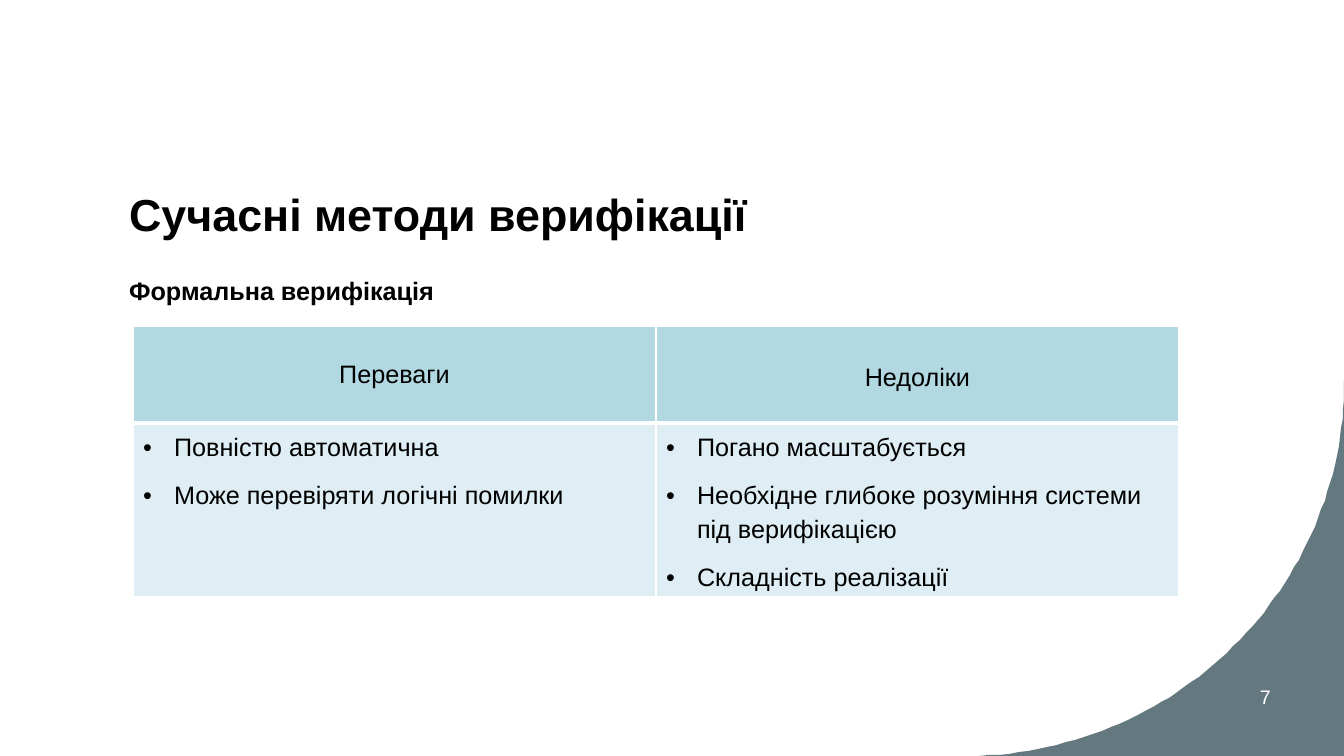
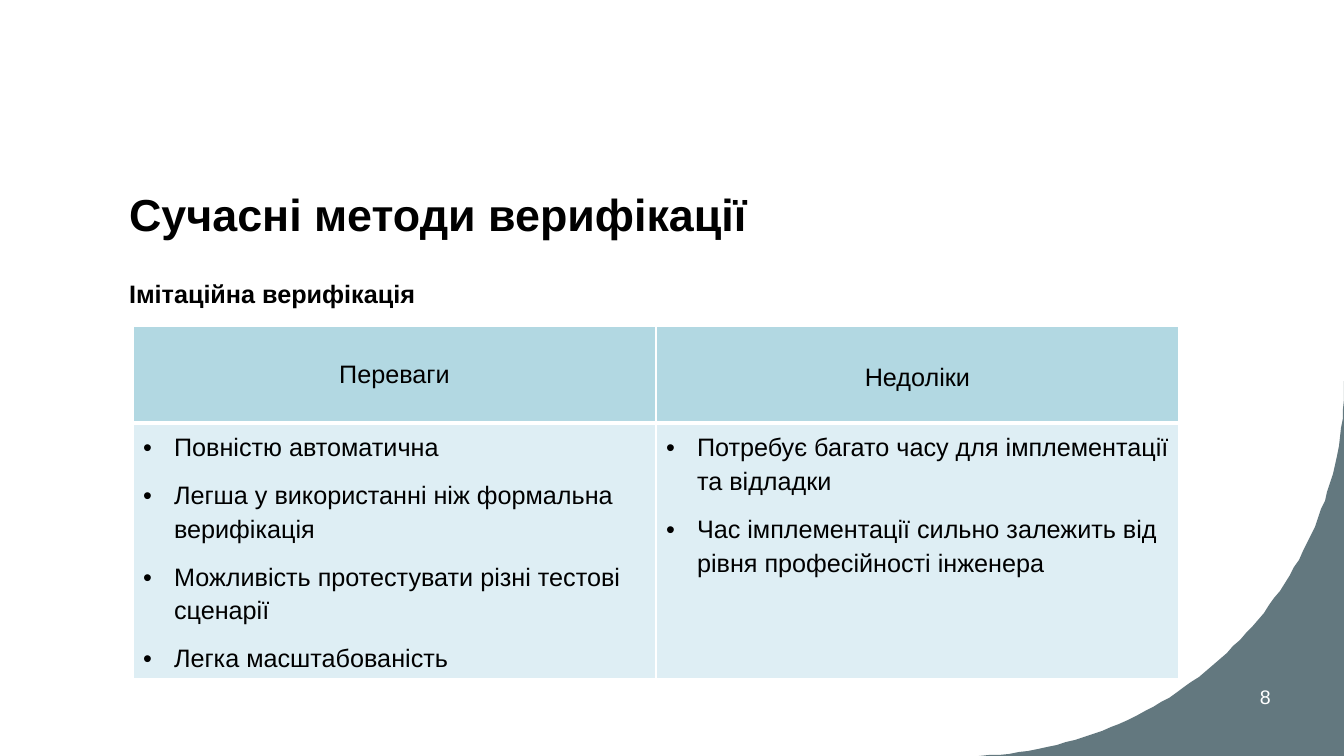
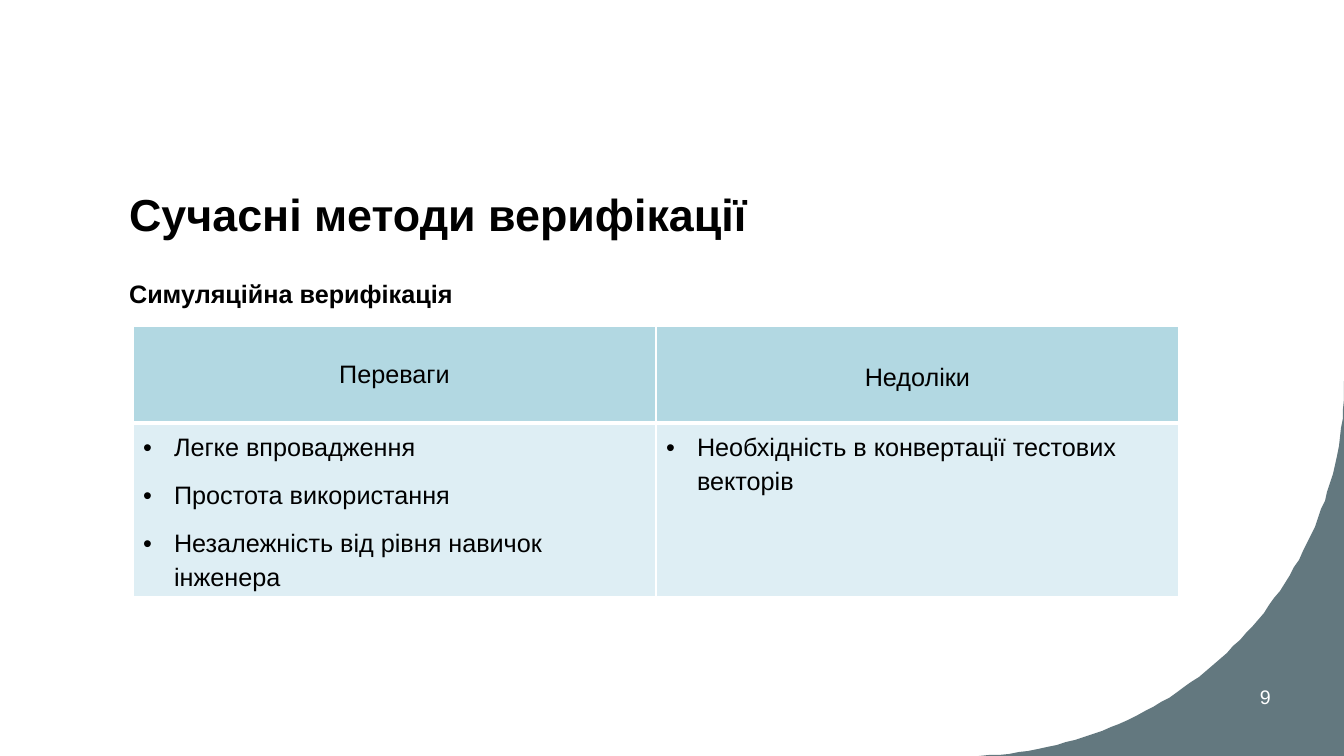
import pptx
import pptx.util
import pptx.dml.color
import pptx.enum.text
import pptx.oxml
import pptx.oxml.ns

PX = 914400 / 100.8  # EMU per pixel
FONT = "Arial"
COLORS = {
    "text": "000000",
    "white": "FFFFFF",
    "corner": "63787F",
    "header": "B2D8E2",
    "body": "DEEEF4",
}
ALIGN = pptx.enum.text.PP_ALIGN
ANCHOR = pptx.enum.text.MSO_ANCHOR
NS = pptx.oxml.ns.nsdecls("a")

TITLE = "Сучасні методи верифікації"
HEADINGS = ["Переваги", "Недоліки"]
METHODS = [
    {
        "name": "Формальна верифікація",
        "spacing": 1.1,
        "pros": ["Повністю автоматична", "Може перевіряти логічні помилки"],
        "cons": [
            "Погано масштабується",
            "Необхідне глибоке розуміння системи під верифікацією",
            "Складність реалізації",
        ],
    },
    {
        "name": "Імітаційна верифікація",
        "spacing": 1.2,
        "pros": [
            "Повністю автоматична",
            "Легша у використанні ніж формальна верифікація",
            "Можливість протестувати різні тестові сценарії",
            "Легка масштабованість",
        ],
        "cons": [
            "Потребує багато часу для імплементації та відладки",
            "Час імплементації сильно залежить від рівня професійності інженера",
        ],
    },
    {
        "name": "Симуляційна верифікація",
        "spacing": 1.2,
        "pros": [
            "Легке впровадження",
            "Простота використання",
            "Незалежність від рівня навичок інженера",
        ],
        "cons": ["Необхідність в конвертації тестових векторів"],
    },
]
FIRST_NUMBER = 7


def px(length):
    return pptx.util.Emu(round(length * PX))


def style(paragraph, size=18, bold=False, color="text", align=ALIGN.LEFT, spacing=1.0, before=0):
    paragraph.alignment = align
    paragraph.line_spacing = spacing
    paragraph.space_before = pptx.util.Pt(before)
    for run in paragraph.runs:
        run.font.name = FONT
        run.font.size = pptx.util.Pt(size)
        run.font.bold = bold
        run.font.color.rgb = pptx.dml.color.RGBColor.from_string(COLORS[color])


prs = pptx.Presentation()
prs.slide_width, prs.slide_height = px(1344), px(756)
layout = prs.slide_layouts[1]

# Shared places of title and body, inherited by every slide
for placeholder, place in zip(layout.placeholders, [(119, 80, 1097, 166), (119, 267, 1097, 387)]):
    placeholder.left, placeholder.top, placeholder.width, placeholder.height = map(px, place)

slides = [prs.slides.add_slide(layout) for method in METHODS]

# Shared corner: a Bézier arc closed along the slide edges, kept on the layout
arc = [(979, 756), (1180, 747), (1334, 592), (1344, 399)]
STEPS = 60
outline = [(1344, 756), (971, 756)]
for step in range(STEPS + 1):
    t = step / STEPS
    weights = [(1 - t) ** 3, 3 * t * (1 - t) ** 2, 3 * t * t * (1 - t), t ** 3]
    outline.append(tuple(sum(w * point[axis] for w, point in zip(weights, arc)) for axis in (0, 1)))
builder = slides[0].shapes.build_freeform(1344, 381, scale=PX)
builder.add_line_segments(outline, close=True)
corner = builder.convert_to_shape()
corner.shadow.inherit = False
corner.fill.solid()
corner.fill.fore_color.rgb = pptx.dml.color.RGBColor.from_string(COLORS["corner"])
corner.line.fill.background()
layout.shapes.element.insert(2, corner.element)

for number, (slide, method) in enumerate(zip(slides, METHODS), FIRST_NUMBER):
    # Title
    title = slide.shapes.title.text_frame
    title.text = TITLE
    title.vertical_anchor = ANCHOR.BOTTOM
    title.auto_size = pptx.enum.text.MSO_AUTO_SIZE.NONE
    style(title.paragraphs[0], size=32, bold=True, spacing=1.1)

    # Name of the method
    method_name = slide.placeholders[1].text_frame
    method_name.text = method["name"]
    method_name.auto_size = pptx.enum.text.MSO_AUTO_SIZE.NONE
    style(method_name.paragraphs[0], bold=True, spacing=method["spacing"])
    properties = method_name.paragraphs[0]._p.get_or_add_pPr()
    properties.set("marL", "0")
    properties.set("indent", "0")
    properties.append(pptx.oxml.parse_xml(f"<a:buNone {NS}/>"))

    # Table of pros and cons; the lower row grows with its text
    comparison = slide.shapes.add_table(2, 2, px(133), px(326), px(1046), px(138)).table
    comparison.horz_banding = False
    comparison.rows[0].height, comparison.rows[1].height = px(97), px(41)
    for column, key in enumerate(["pros", "cons"]):
        comparison.columns[column].width = px(523)

        heading = comparison.cell(0, column)
        heading.text_frame.text = HEADINGS[column]
        heading.vertical_anchor = ANCHOR.MIDDLE
        style(heading.text_frame.paragraphs[0], align=ALIGN.CENTER, spacing=[1.0, 1.2][column])

        points = comparison.cell(1, column)
        points.text_frame.text = "\n".join(method[key])
        for index, point in enumerate(points.text_frame.paragraphs):
            style(point, spacing=1.2, before=10 if index else 0)
            properties = point._p.get_or_add_pPr()
            properties.set("marL", str(px(31)))
            properties.set("indent", str(-px(31)))
            for bullet in (
                f'<a:buClr {NS}><a:srgbClr val="{COLORS["text"]}"/></a:buClr>',
                f'<a:buFont {NS} typeface="{FONT}"/>',
                f'<a:buChar {NS} char="•"/>',
            ):
                properties.append(pptx.oxml.parse_xml(bullet))

        # White borders, thicker between the two rows
        for cell, fill, thick in ((heading, "header", "B"), (points, "body", "T")):
            for side in "LRTB":
                width = pptx.util.Pt(3 if side == thick else 1)
                cell._tc.get_or_add_tcPr().append(pptx.oxml.parse_xml(
                    f'<a:ln{side} {NS} w="{width}"><a:solidFill>'
                    f'<a:srgbClr val="{COLORS["white"]}"/></a:solidFill></a:ln{side}>'))
            cell.fill.solid()
            cell.fill.fore_color.rgb = pptx.dml.color.RGBColor.from_string(COLORS[fill])

    # Page number
    page = slide.shapes.add_textbox(px(1250), px(675), px(40), px(40)).text_frame
    page.word_wrap = True
    page.margin_left = page.margin_right = page.margin_top = page.margin_bottom = px(10)
    page.text = str(number)
    style(page.paragraphs[0], size=14, color="white")

prs.save("out.pptx")
